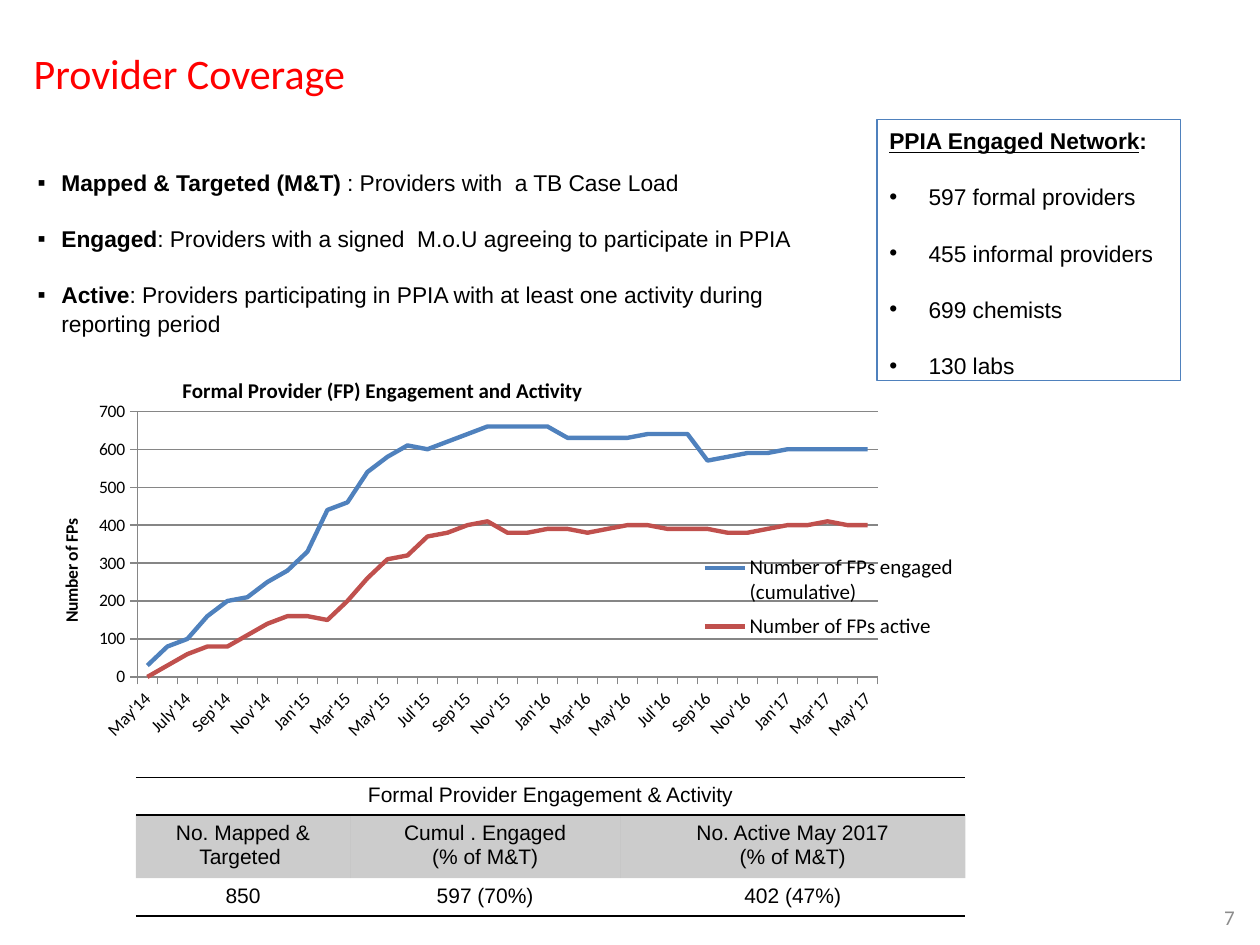
from lxml import etree
from pptx import Presentation
from pptx import util as u
from pptx.chart.data import CategoryChartData
from pptx.dml.color import RGBColor
from pptx.enum import chart as ch, shapes, text
from pptx.oxml.ns import qn

BLACK, BLUE, RED, GREY = "000000", "4F81BD", "C0504D", "868686"
ALIGN = text.PP_ALIGN
LINE = 1.05  # line spacing of the lists

MONTHS = ("May'14 June'14 July'14 Aug'14 Sep'14 Oct'14 Nov'14 Dec'14 "
          "Jan'15 Feb'15 Mar'15 April'15 May'15 Jun'15 Jul'15 Aug'15 Sep'15 Oct'15 Nov'15 Dec'15 "
          "Jan'16 Feb'16 Mar'16 Apr'16 May'16 Jun'16 Jul'16 Aug'16 Sep'16 Oct'16 Nov'16 Dec'16 "
          "Jan'17 Feb'17 Mar'17 Apr'17 May'17").split()
ENGAGED = [30, 80, 100, 160, 200, 210, 250, 280, 330, 440, 460, 540, 580, 610, 600, 620, 640, 660, 660,
           660, 660, 630, 630, 630, 630, 640, 640, 640, 570, 580, 590, 590, 600, 600, 600, 600, 600]
ACTIVE = [0, 30, 60, 80, 80, 110, 140, 160, 160, 150, 200, 260, 310, 320, 370, 380, 400, 410, 380,
          380, 390, 390, 380, 390, 400, 400, 390, 390, 390, 380, 380, 390, 400, 400, 410, 400, 400]


def rgb(color):
    return RGBColor.from_string(color)


def box(*lengths):
    return [u.Cm(n) for n in lengths]


def style(font, color=BLACK, size=13, **values):
    font.color.rgb = rgb(color)
    for name, value in {"name": "Arial", "size": u.Pt(size), **values}.items():
        setattr(font, name, value)


def add_runs(p, runs, **base):
    for words, values in runs:
        r = p.add_run()
        r.text = words
        style(r.font, **{**base, **values})


def sub(parent, tag, **attrs):
    return etree.SubElement(parent, qn(tag), attrs)


def add_label(slide, place, words, align, **font):
    tf = slide.shapes.add_textbox(*box(*place)).text_frame
    tf.word_wrap = True
    tf.vertical_anchor = text.MSO_ANCHOR.MIDDLE
    p = tf.paragraphs[0]
    p.alignment = align
    add_runs(p, [(words, {})], name="Calibri", **font)


def add_list(tf, items, mark, indent, heading=None):
    """Fill a frame with spaced bullets, after an optional plain heading."""
    tf.word_wrap = True
    tf.vertical_anchor = text.MSO_ANCHOR.TOP
    rows = ([heading] if heading else []) + items
    for i, runs in enumerate(rows):
        p = tf.add_paragraph() if i else tf.paragraphs[0]
        p.alignment = ALIGN.LEFT
        p.line_spacing = LINE
        p.space_before = u.Pt(15.7 if i else 0)
        add_runs(p, runs)
        if runs is not heading:
            pPr = p._p.get_or_add_pPr()
            pPr.set("marL", str(u.Cm(indent)))
            pPr.set("indent", str(-u.Cm(indent)))
            sub(pPr, "a:buFont", typeface="Arial")
            sub(pPr, "a:buChar", char=mark)


def set_layout(element, after, **values):
    """Place a chart part by fractions of the chart area."""
    for old in element.findall(qn("c:layout")):
        element.remove(old)
    layout = etree.Element(qn("c:layout"))
    manual = sub(layout, "c:manualLayout")
    if "w" in values and after is None:
        sub(manual, "c:layoutTarget", val="inner")
    for axis in "xy":
        sub(manual, f"c:{axis}Mode", val="edge")
    for name, value in values.items():
        sub(manual, f"c:{name}", val=str(value))
    if after is None:
        element.insert(0, layout)
    else:
        element.find(qn(after)).addnext(layout)


def add_chart_title(owner, words, size, **place):
    title = owner.chart_title if hasattr(owner, "chart_title") else owner.axis_title
    add_runs(title.text_frame.paragraphs[0], [(words, {})], name="Calibri", size=size, bold=True)
    set_layout(title._element, "c:tx", **place)


def add_line_chart(slide):
    data = CategoryChartData()
    data.categories = MONTHS
    data.add_series("Number of FPs engaged (cumulative)", ENGAGED)
    data.add_series("Number of FPs active ", ACTIVE)
    chart = slide.shapes.add_chart(ch.XL_CHART_TYPE.LINE, *box(0.58, 7.19, 18.87, 7.82), data).chart
    style(chart.font, size=10, name="Calibri")
    plot = chart.plots[0]
    plot.vary_by_categories = False
    for series, color in zip(plot.series, (BLUE, RED)):
        series.smooth = False
        series.marker.style = ch.XL_MARKER_STYLE.NONE
        series.format.line.color.rgb = rgb(color)
        series.format.line.width = u.Pt(2.5)

    # Axes
    cat, val = chart.category_axis, chart.value_axis
    val.minimum_scale, val.maximum_scale, val.major_unit = 0, 700, 100
    val.has_major_gridlines = True
    for part in (cat, val, val.major_gridlines):
        part.format.line.color.rgb = rgb(GREY)
        part.format.line.width = u.Pt(0.75)
    for axis in (cat, val):
        axis.major_tick_mark = ch.XL_TICK_MARK.OUTSIDE
        style(axis.tick_labels.font, size=10, name="Calibri")
    cat._element.find(qn("c:txPr")).find(qn("a:bodyPr")).set("rot", "-2700000")
    skip = etree.Element(qn("c:tickLblSkip"), val="2")
    cat._element.find(qn("c:noMultiLvlLbl")).addprevious(skip)

    # Titles, legend and plot area
    add_chart_title(chart, "Formal Provider (FP) Engagement and Activity", 12, x=0.16, y=0.04)
    add_chart_title(val, "Number of FPs", 10, x=0.03, y=0.41)
    chart.has_legend = True
    legend = chart.legend
    legend.position = ch.XL_LEGEND_POSITION.RIGHT
    legend.include_in_layout = True
    style(legend.font, size=12, name="Calibri")
    set_layout(legend._element, "c:legendPos", x=0.71, y=0.49, w=0.29, h=0.26)
    set_layout(chart._chartSpace.chart.plotArea, None, x=0.116, y=0.141, w=0.791, h=0.685)


def set_cell(cell, words, edges="", shaded=False):
    cell.vertical_anchor = text.MSO_ANCHOR.TOP
    for i, line in enumerate(words.split("\n")):
        p = cell.text_frame.add_paragraph() if i else cell.text_frame.paragraphs[0]
        p.alignment = ALIGN.CENTER
        if line:
            add_runs(p, [(line, {})], size=12)
    tcPr = cell._tc.get_or_add_tcPr()
    for edge in edges:
        ln = sub(tcPr, f"a:ln{edge}", w=str(u.Pt(1)))
        sub(sub(ln, "a:solidFill"), "a:srgbClr", val=BLACK)
    if shaded:
        cell.fill.solid()
        cell.fill.fore_color.rgb = rgb(BLACK)
        sub(tcPr.find(qn("a:solidFill"))[0], "a:alpha", val="20000")
    else:
        cell.fill.background()


def add_summary_table(slide):
    rows = [["Formal Provider Engagement & Activity", "", ""],
            ["No. Mapped & Targeted ", "Cumul . Engaged\n(% of M&T)", "No. Active May 2017\n(% of M&T)"],
            ["850", "597 (70%)", "402 (47%)"]]
    table = slide.shapes.add_table(3, 3, *box(2.74, 15.67, 16.72, 2.79)).table
    table.first_row = table.horz_banding = False
    table._tbl.tblPr.find(qn("a:tableStyleId")).text = "{2D5ABB26-0587-4C30-8999-92F81FD0307C}"
    for column, width in zip(table.columns, (4.32, 5.44, 6.96)):
        column.width = u.Cm(width)
    for row, height in zip(table.rows, (0.76, 1.27, 0.76)):
        row.height = u.Cm(height)
    table.cell(0, 0).merge(table.cell(0, 2))
    for i, (words, edges) in enumerate(zip(rows, ("TB", "", "B"))):
        for j, value in enumerate(words):
            set_cell(table.cell(i, j), value, edges, shaded=i == 1)


def add_network_box(slide):
    sp = slide.shapes.add_shape(shapes.MSO_SHAPE.RECTANGLE, *box(17.68, 2.41, 6.12, 5.26))
    sp.shadow.inherit = False
    sp.fill.background()
    sp.line.color.rgb = rgb(BLUE)
    sp.line.width = u.Pt(0.75)
    heading = [("PPIA Engaged Network", {"bold": True, "underline": True}), (":", {"bold": True})]
    providers = ["597 formal providers", "455 informal providers", "699 chemists", "130 labs"]
    add_list(sp.text_frame, [[(name, {})] for name in providers], "•", 0.79, heading)


def main():
    prs = Presentation()
    prs.slide_width, prs.slide_height = box(25.4, 19.05)
    slide = prs.slides.add_slide(prs.slide_layouts[6])

    # Title and page number
    add_label(slide, (0.43, 0.58, 22.78, 1.78), "Provider Coverage", ALIGN.LEFT, size=24, color="FF0000")
    add_label(slide, (22.17, 18.03, 2.97, 0.91), "7", ALIGN.RIGHT, size=12, color="8C8C8C")

    add_line_chart(slide)

    # Definitions
    terms = [("Mapped & Targeted (M&T) ", ": Providers with  a TB Case Load"),
             ("Engaged", ": Providers with a signed  M.o.U agreeing to participate in PPIA"),
             ("Active", ": Providers participating in PPIA with at least one activity during reporting period")]
    tf = slide.shapes.add_textbox(*box(0.51, 3.25, 16.56, 3.58)).text_frame
    add_list(tf, [[(term, {"bold": True}), (meaning, {})] for term, meaning in terms], "▪", 0.48)

    add_summary_table(slide)
    add_network_box(slide)
    prs.save("out.pptx")


if __name__ == "__main__":
    main()
